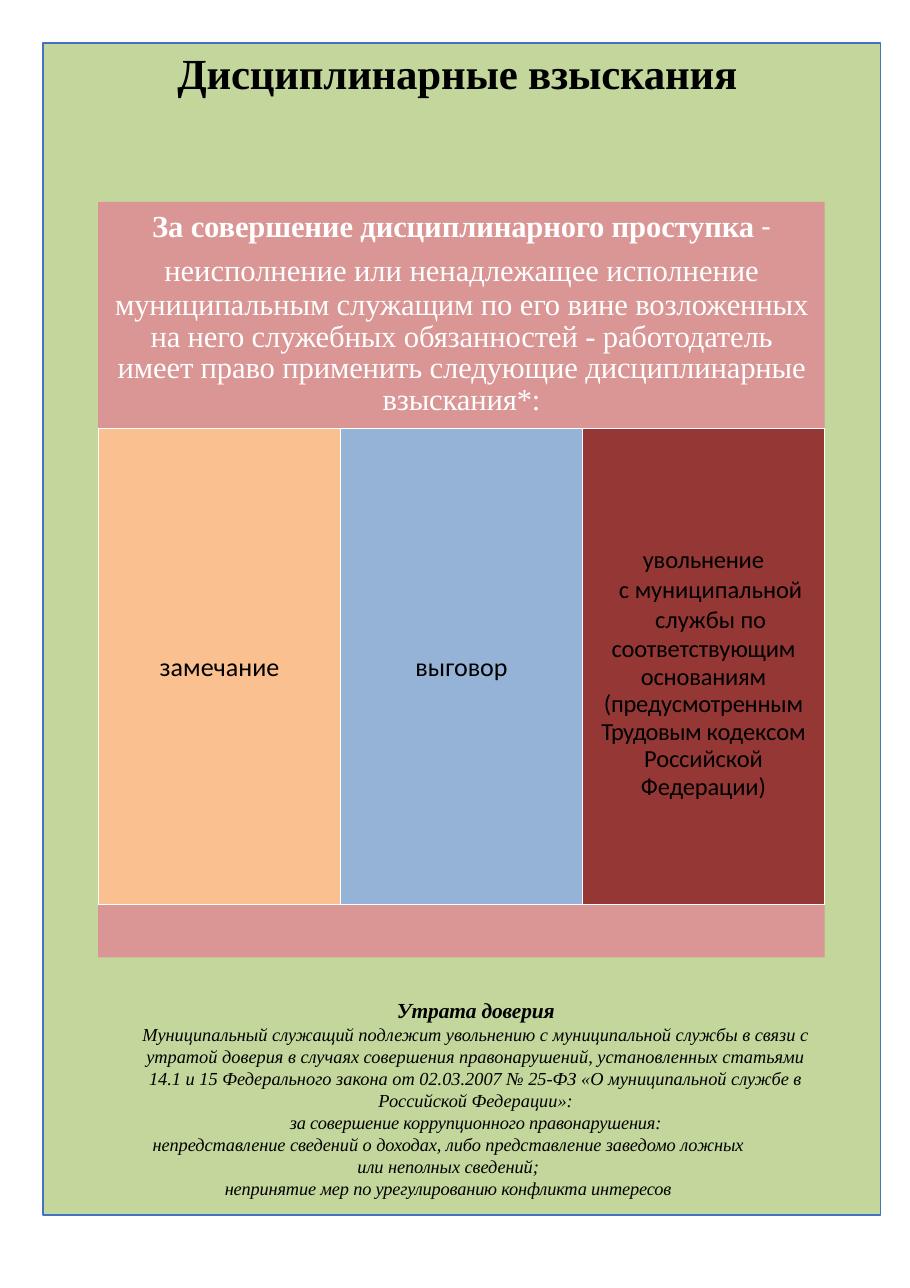
"""Build a poster on disciplinary penalties for municipal staff."""
import pptx
import pptx.util
import pptx.dml.color
import pptx.enum.shapes
import pptx.enum.text

Pt = pptx.util.Pt
ALIGN = pptx.enum.text.PP_ALIGN
ANCHOR = pptx.enum.text.MSO_ANCHOR
SERIF, SANS = "Times New Roman", "Calibri"


def paint(target, color):
    target.solid()
    target.fore_color.rgb = pptx.dml.color.RGBColor.from_string(color)


def write(shape, paras, color="000000", top=0, side=0, anchor=ANCHOR.TOP, align=ALIGN.CENTER):
    frame = shape.text_frame
    frame.word_wrap = True
    frame.vertical_anchor = anchor
    frame.margin_left = frame.margin_right = Pt(side)
    frame.margin_top, frame.margin_bottom = Pt(top), 0
    for index, (before, pitch, left, right, runs) in enumerate(paras):
        para = frame.add_paragraph() if index else frame.paragraphs[0]
        para.alignment = align
        para.space_before = Pt(before)
        para.line_spacing = pitch
        props = para._p.get_or_add_pPr()
        props.set("marL", str(Pt(left)))
        props.set("marR", str(Pt(right)))
        for text, font, size, bold, italic, track in runs:
            for row, line in enumerate(text.split("\n")):
                if row:
                    para.add_line_break()
                run = para.add_run()
                run.text = line
                run.font.name, run.font.size = font, Pt(size)
                run.font.bold, run.font.italic = bold, italic
                paint(run.font.fill, color)
                run._r.get_or_add_rPr().set("spc", str(track))


deck = pptx.Presentation()
deck.slide_width, deck.slide_height = Pt(594.72), Pt(841.68)
slide = deck.slides.add_slide(deck.slide_layouts[6])

left, width = 64.2, 474.8
head, body, foot, end = 131.9, 279.9, 591.1, 625.6
step = 158.1

blocks = [
    ("page", 28, 28, 547.5, 766, "C3D69B", "4471C4"),
    ("header", left, head, width, body - head, "D99694", None),
    ("footer", left, foot, width, end - foot, "D99694", None),
]
for index, color in enumerate(["FAC090", "95B3D7", "953735"]):
    blocks.append((index, left + 0.3 + index * step, body, step, foot - body, color, "FFFFFF"))

shapes = {}
for name, x, y, wide, high, color, edge in blocks:
    shape = slide.shapes.add_shape(
        pptx.enum.shapes.MSO_SHAPE.RECTANGLE, Pt(x), Pt(y), Pt(wide), Pt(high))
    shape.shadow.inherit = False
    paint(shape.fill, color)
    if edge:
        paint(shape.line.fill, edge)
        shape.line.width = Pt(1)
    else:
        shape.line.fill.background()
    shapes[name] = shape

title = slide.shapes.add_textbox(Pt(116), Pt(29.5), Pt(380), Pt(35))
write(title, [(0.9, None, 0, 0, [("Дисциплинарные взыскания", SERIF, 28, True, False, -10)])],
      top=1, align=ALIGN.LEFT)

write(shapes["header"], [
    (7.3, None, 0, 0, [
        ("За совершение дисциплинарного проступка ", SERIF, 20, True, False, -10),
        ("-", SANS, 20, False, False, 0)]),
    (6.3, Pt(22.4), 0, 0, [
        ("неисполнение или ненадлежащее исполнение", SERIF, 20, False, False, -5)]),
    (1.6, 0.86, 0, 0, [
        ("муниципальным служащим по его вине возложенных на него служебных "
         "обязанностей - работодатель\nимеет право применить следующие "
         "дисциплинарные взыскания*:", SERIF, 20, False, False, -10)]),
], color="FFFFFF", top=3.6, side=7.7)

for index, label in enumerate(["замечание", "выговор"]):
    write(shapes[index], [(0, None, 0, 0, [(label, SANS, 17, False, False, 0)])],
          anchor=ANCHOR.MIDDLE)

write(shapes[2], [
    (0, None, 0, 0, [("увольнение", SANS, 16, False, False, -10)]),
    (0, 1.02, 9.4, 0, [("с муниципальной службы по", SANS, 16, False, False, 0)]),
    (1.6, 0.94, 0, 0, [
        ("соответствующим основаниям (предусмотренным ", SANS, 16, False, False, -10),
        ("Трудовым ", SANS, 16, False, False, -30),
        ("кодексом Российской Федерации)", SANS, 16, False, False, -5)]),
], top=8, side=5, anchor=ANCHOR.MIDDLE)

note = slide.shapes.add_textbox(Pt(91.4), Pt(648.7), Pt(439.2), Pt(141))
paras = [(0, None, 0, 0, [("Утрата доверия", SERIF, 14, True, True, -10)])]
for text, right, track in [
    ("Муниципальный служащий подлежит увольнению с муниципальной службы в связи с "
     "утратой доверия в случаях совершения правонарушений, установленных статьями "
     "14.1 и 15 Федерального закона от 02.03.2007 № 25-ФЗ «О муниципальной службе в "
     "Российской Федерации»:", 0, 0),
    ("за совершение коррупционного правонарушения:", 0, -10),
    ("непредставление сведений о доходах, либо представление заведомо ложных "
     "или неполных сведений;", 36, -5),
    ("непринятие мер по урегулированию конфликта интересов", 36, -10),
]:
    paras.append((0, None, 0, right, [(text, SERIF, 12, False, True, track)]))
write(note, paras, top=2.9)

deck.save("out.pptx")
